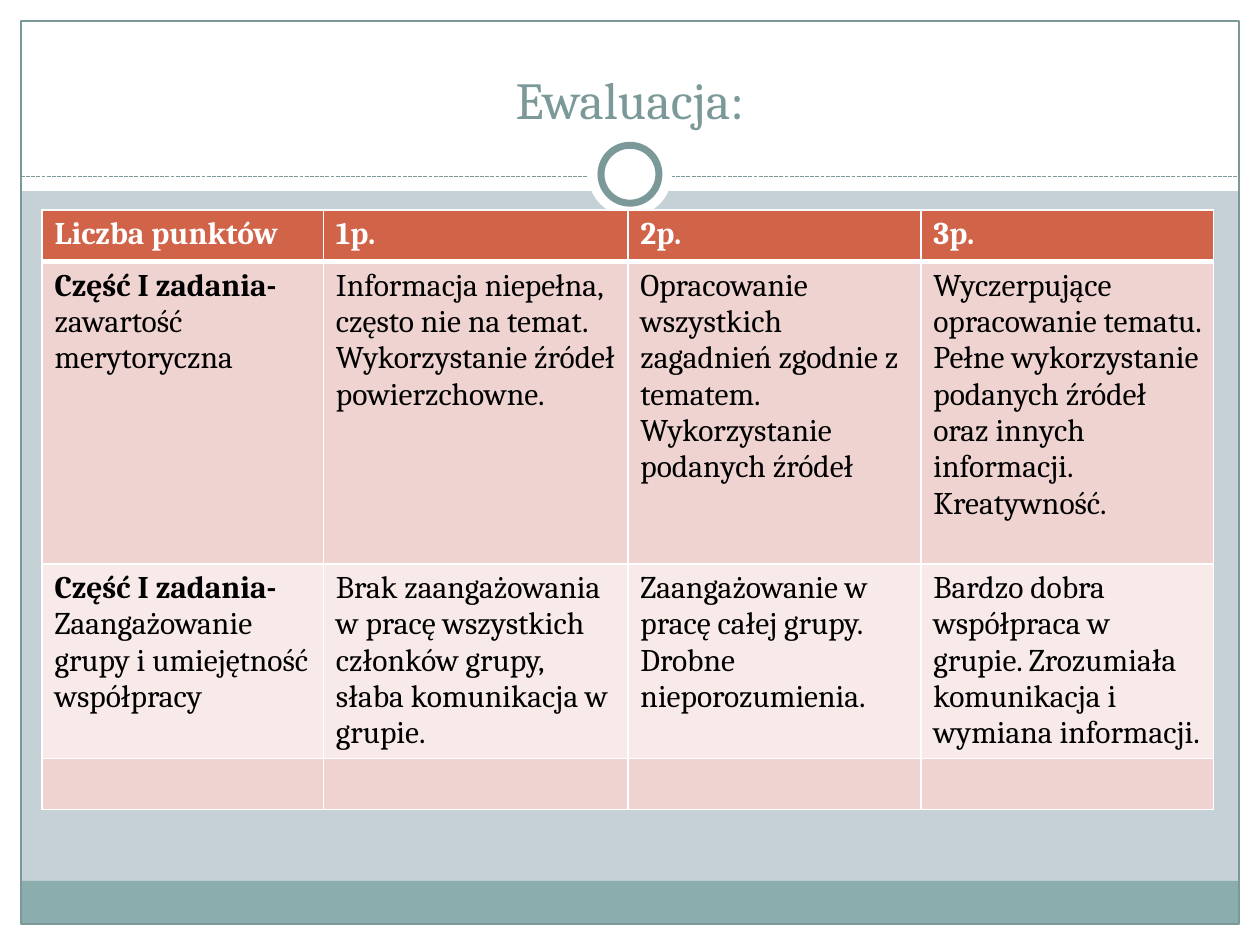
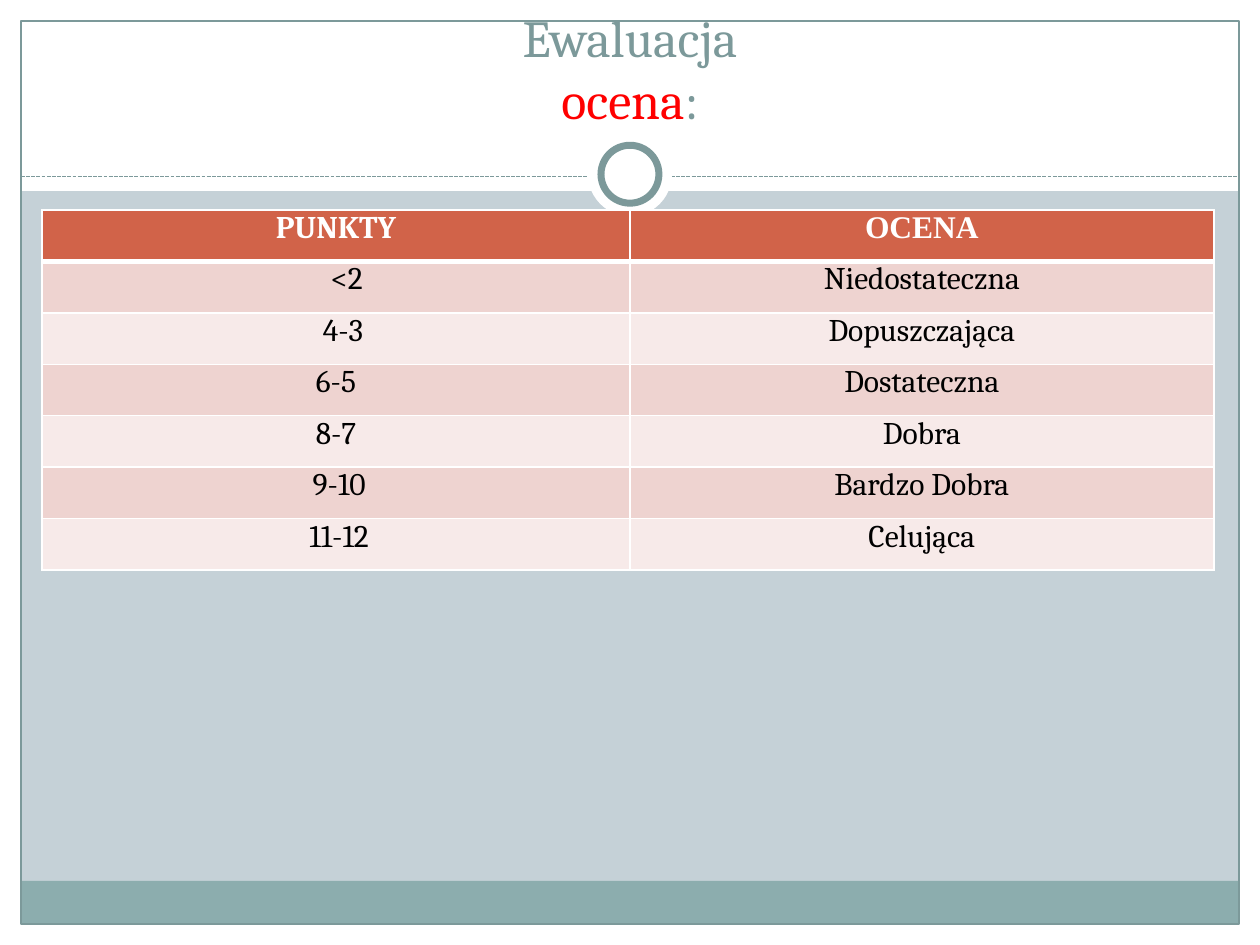
from lxml.etree import SubElement
from pptx import Presentation
from pptx.dml.color import RGBColor
from pptx.enum.dml import MSO_LINE
from pptx.enum.shapes import MSO_CONNECTOR, MSO_SHAPE
from pptx.enum.text import MSO_ANCHOR as Anchor, MSO_AUTO_SIZE as AutoSize, PP_ALIGN as Align
from pptx.oxml.ns import qn
from pptx.util import Inches, Pt

COLUMNS, ROWS = 60, 45
WHITE, BLACK, RED = "FFFFFF", "000000", "FF0000"
BACKDROP, BAND, TEAL = "C5D1D7", "8CADAE", "7C999A"
HEADER, STRIPES = "D16349", ("EED3D0", "F7EAE9")
FONT = "Cambria"
TITLE_SIZE, TABLE_SIZE = 29.7, 18
ROW = 2.45


def rgb(code):
    return RGBColor.from_string(code)


class Deck:
    """Draws the slides on a grid of equal columns and rows."""

    def __init__(self):
        self.deck = Presentation()
        self.deck.slide_width, self.deck.slide_height = Inches(10), Inches(7.5)
        self.layout = self.deck.slide_layouts[5]
        self.page = None

    def x(self, columns):
        return round(self.deck.slide_width * columns / COLUMNS)

    def y(self, rows):
        return round(self.deck.slide_height * rows / ROWS)

    def area(self, left, top, width, height):
        return self.x(left), self.y(top), self.x(width), self.y(height)

    def add_page(self):
        self.page = self.deck.slides.add_slide(self.layout)

    def shape(self, kind, area, fill=None, line=None, weight=0.75):
        shape = self.page.shapes.add_shape(kind, *self.area(*area))
        shape.shadow.inherit = False
        if fill:
            shape.fill.solid()
            shape.fill.fore_color.rgb = rgb(fill)
        else:
            shape.fill.background()
        if line:
            shape.line.color.rgb = rgb(line)
            shape.line.width = Pt(weight)
        else:
            shape.line.fill.background()
        return shape

    def dashed_line(self, left, right, row):
        line = self.page.shapes.add_connector(
            MSO_CONNECTOR.STRAIGHT, self.x(left), self.y(row), self.x(right), self.y(row))
        line.line.color.rgb = rgb(TEAL)
        line.line.width = Pt(0.75)
        line.line.dash_style = MSO_LINE.SQUARE_DOT
        SubElement(line._element.spPr, qn("a:effectLst"))
        return line

    def style_layout(self):
        background = self.layout.background.fill
        background.solid()
        background.fore_color.rgb = rgb(BACKDROP)
        margins = [(0, 44, 60, 1), (0, 0, 60, 9.1), (0, 0, 1, 45), (59, 0, 1, 45)]
        decor = [self.shape(MSO_SHAPE.RECTANGLE, area, WHITE) for area in margins]
        decor += [
            self.shape(MSO_SHAPE.RECTANGLE, (1, 41.95, 58, 2.05), BAND),
            self.shape(MSO_SHAPE.RECTANGLE, (1, 1, 58, 43), line=TEAL),
            self.dashed_line(1, 59, 8.4),
            self.shape(MSO_SHAPE.OVAL, (28, 6.3, 4, 4), WHITE),
            self.shape(MSO_SHAPE.OVAL, (28.62, 6.92, 2.76, 2.76), WHITE, TEAL, 4),
        ]
        for index, item in enumerate(decor):
            item._element.xpath(".//p:cNvPr")[0].set("id", str(100 + index))
            self.layout.shapes._spTree.insert(2 + index, item._element)

    def fill_para(self, para, spans, size, color, align, bold=False, font=FONT):
        para.alignment = align
        para.font.name, para.font.size, para.font.bold = font, Pt(size), bold
        para.font.color.rgb = rgb(color)
        for text, look in spans:
            if text == "\n":
                para.add_line_break()
                continue
            span = para.add_run()
            span.text = text
            if "bold" in look:
                span.font.bold = look["bold"]
            if "color" in look:
                span.font.color.rgb = rgb(look["color"])

    def title(self, *spans):
        box = self.page.shapes.title
        box.left, box.top, box.width, box.height = self.area(2, 1.5, 56, 5)
        frame = box.text_frame
        frame.word_wrap, frame.auto_size = True, AutoSize.NONE
        frame.vertical_anchor = Anchor.BOTTOM
        self.fill_para(frame.paragraphs[0], spans, TITLE_SIZE, TEAL, Align.CENTER)

    def border(self, cell, row):
        properties = cell._tc.get_or_add_tcPr()
        heavy = {0: "lnB", 1: "lnT"}.get(row)
        for side in ("lnL", "lnR", "lnT", "lnB"):
            line = SubElement(properties, qn(f"a:{side}"), w=str(Pt(3 if side == heavy else 1)))
            fill = SubElement(line, qn("a:solidFill"))
            SubElement(fill, qn("a:srgbClr"), val=WHITE)

    def table(self, widths, heights, rows, align, insets, fonts=None, indents=None):
        area = self.area(2, 10, sum(widths), sum(heights))
        grid = self.page.shapes.add_table(len(rows), len(widths), *area).table
        for column, width in zip(grid.columns, widths):
            column.width = self.x(width)
        for row, height in zip(grid.rows, heights):
            row.height = self.y(height)
        for r, row in enumerate(rows):
            for c, content in enumerate(row):
                cell = grid.cell(r, c)
                self.border(cell, r)
                cell.fill.solid()
                cell.fill.fore_color.rgb = rgb(STRIPES[(r - 1) % 2] if r else HEADER)
                side, end = (Inches(inset) for inset in insets)
                indent = Inches((indents or {}).get((r, c), 0))
                cell.margin_left, cell.margin_right = side + indent, side
                cell.margin_top = cell.margin_bottom = end
                lines = [[(content, {})]] if isinstance(content, str) else content
                for index, spans in enumerate(lines):
                    frame = cell.text_frame
                    para = frame.add_paragraph() if index else frame.paragraphs[0]
                    self.fill_para(para, [span for span in spans if span[0]], TABLE_SIZE,
                                   BLACK if r else WHITE, align, r == 0,
                                   (fonts or {}).get((r, c), FONT))


def criteria(deck):
    strong = {"bold": True}
    rows = [
        ("Liczba punktów", "1p.", "2p.", "3p."),
        ([[("Część I zadania- ", strong), ("zawartość merytoryczna", {})]],
         "Informacja niepełna, często nie na temat. Wykorzystanie źródeł powierzchowne.",
         "Opracowanie wszystkich zagadnień zgodnie z tematem. "
         "Wykorzystanie podanych źródeł",
         "Wyczerpujące opracowanie tematu. Pełne wykorzystanie podanych źródeł "
         "oraz innych informacji. Kreatywność."),
        ([[("Część I zadania-", strong)],
          [("Zaangażowanie grupy i umiejętność współpracy", {})]],
         "Brak zaangażowania w pracę wszystkich członków grupy, "
         "słaba komunikacja w grupie.",
         "Zaangażowanie w pracę całej grupy. Drobne nieporozumienia.",
         "Bardzo dobra współpraca w grupie. Zrozumiała komunikacja i wymiana informacji."),
        ("",) * 4,
    ]
    deck.title(("Ewaluacja:", {}))
    deck.table((13.4, 14.5, 13.95, 13.95), (ROW, 14.4, 9.2, ROW), rows, Align.LEFT, (0.1, 0.05))


def grades(deck):
    rows = [
        ("PUNKTY", "OCENA"),
        ("<2", "Niedostateczna"),
        ("4-3", "Dopuszczająca"),
        ("6-5", "Dostateczna"),
        ("8-7", "Dobra"),
        ("9-10", "Bardzo Dobra"),
        ("11-12", "Celująca"),
    ]
    deck.title(("Ewaluacja", {}), ("\n", {}), ("ocena", {"color": RED}), (":", {}))
    deck.table((28, 27.8), (ROW,) * len(rows), rows, Align.CENTER, (0.07, 0),
               fonts={(0, 1): "Times New Roman"},
               indents={(1, 0): 0.17, (2, 0): 0.11, (5, 0): 0.05, (6, 0): 0.05})


def main():
    deck = Deck()
    deck.add_page()
    deck.style_layout()
    criteria(deck)
    deck.add_page()
    grades(deck)
    deck.deck.save("out.pptx")


if __name__ == "__main__":
    main()
